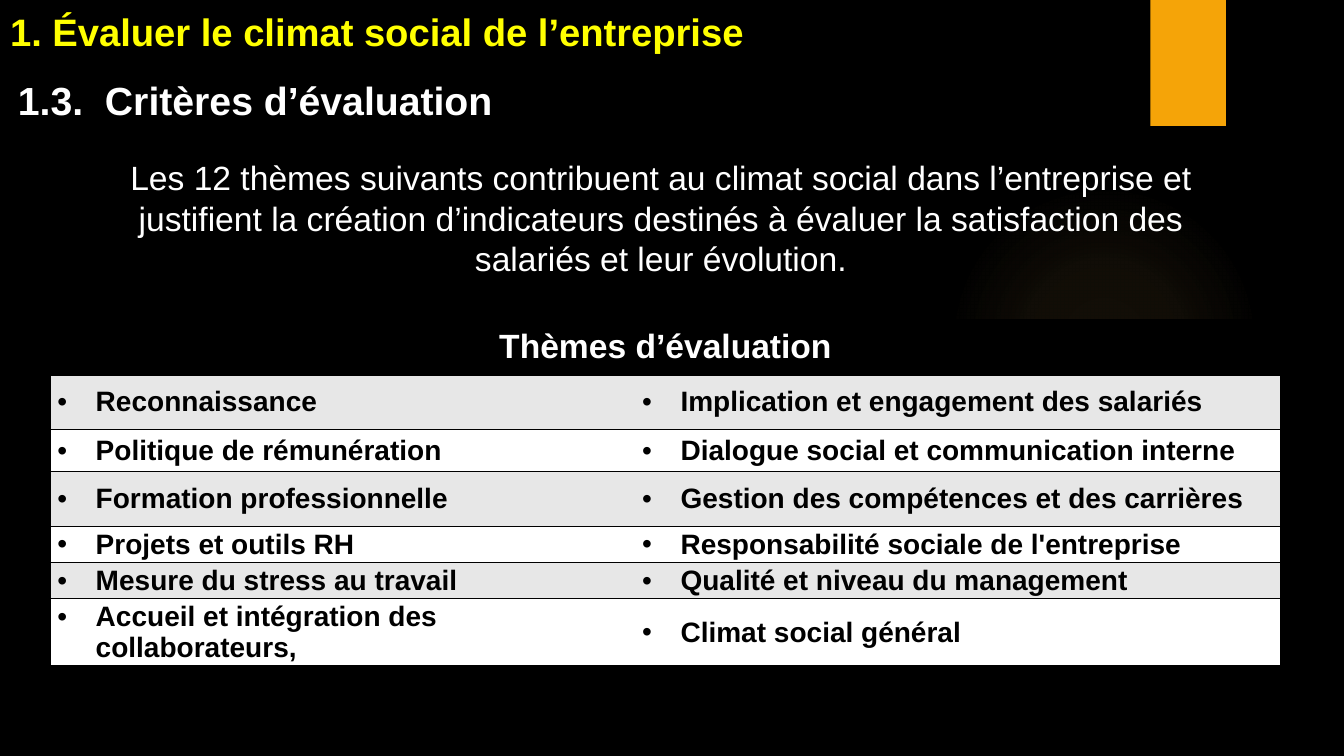
from dataclasses import dataclass

from lxml import etree
from pptx import Presentation
from pptx.dml.color import RGBColor
from pptx.enum.shapes import MSO_SHAPE
from pptx.enum.text import MSO_ANCHOR, MSO_AUTO_SIZE, PP_ALIGN
from pptx.oxml.ns import qn
from pptx.util import Inches, Pt

LEFT, CENTER, JUSTIFY = PP_ALIGN.LEFT, PP_ALIGN.CENTER, PP_ALIGN.JUSTIFY
MIDDLE, BOTTOM = MSO_ANCHOR.MIDDLE, MSO_ANCHOR.BOTTOM
RECTANGLE, OVAL = MSO_SHAPE.RECTANGLE, MSO_SHAPE.OVAL
NO_AUTOFIT = MSO_AUTO_SIZE.NONE
TITLE_ONLY = 5


@dataclass(frozen=True)
class Theme:
    font: str = "Arial"
    black: str = "000000"
    white: str = "FFFFFF"
    yellow: str = "FFFF00"
    orange: str = "F5A408"
    glow: str = "FAC96A"
    band: str = "E7E7E7"
    title: float = 27.3
    heading: float = 28
    body: float = 24
    cell: float = 20


THEME = Theme()

THEMES = [
    ("Reconnaissance", "Implication et engagement des salariés"),
    ("Politique de rémunération", "Dialogue social et communication interne"),
    ("Formation professionnelle", "Gestion des compétences et des carrières"),
    ("Projets et outils RH", "Responsabilité sociale de l'entreprise"),
    ("Mesure du stress au travail", "Qualité et niveau du management"),
    ("Accueil et intégration des collaborateurs,", "Climat social général"),
]
COLUMN_WIDTHS = [5.8, 6.4]
ROW_HEIGHTS = [0.55, 0.54, 0.42, 0.54, 0.36, 0.36, 0.62]


def color(value):
    return RGBColor.from_string(value)


def add_text(para, text, size, ink, bold=True, align=LEFT):
    para.alignment = align
    span = para.add_run()
    span.text = text
    span.font.name = THEME.font
    span.font.size = Pt(size)
    span.font.bold = bold
    span.font.color.rgb = color(ink)


def add_child(parent, tag, **attributes):
    return etree.SubElement(parent, qn(tag), attributes)


def set_indent(para, left, first=0):
    properties = para._p.get_or_add_pPr()
    properties.set("marL", str(Inches(left)))
    properties.set("indent", str(Inches(first)))
    return properties


def add_plain_shape(page, kind, box):
    shape = page.shapes.add_shape(kind, *map(Inches, box))
    shape.shadow.inherit = False
    shape.line.fill.background()
    return shape


# Background: soft glow and orange bar
def add_decoration(page):
    page.background.fill.solid()
    page.background.fill.fore_color.rgb = color(THEME.black)

    glow = add_plain_shape(page, OVAL, (9.41, 1.83, 3.08, 3.08))
    gradient = etree.Element(qn("a:gradFill"), rotWithShape="1")
    stops = add_child(gradient, "a:gsLst")
    for position, opacity in [(0, 7), (36, 6), (69, 0)]:
        stop = add_child(stops, "a:gs", pos=str(position * 1000))
        tint = add_child(stop, "a:srgbClr", val=THEME.glow)
        add_child(tint, "a:alpha", val=str(opacity * 1000))
    circle = add_child(gradient, "a:path", path="circle")
    add_child(circle, "a:fillToRect", **dict.fromkeys("ltrb", "50000"))
    glow._element.spPr.find(qn("a:prstGeom")).addnext(gradient)

    bar = add_plain_shape(page, RECTANGLE, (11.41, 0, 0.75, 1.25))
    bar.fill.solid()
    bar.fill.fore_color.rgb = color(THEME.orange)


# Slide title
def add_title(page, box):
    title = page.shapes.title
    title.left, title.top, title.width, title.height = map(Inches, box)
    frame = title.text_frame
    frame.auto_size = NO_AUTOFIT
    frame.vertical_anchor = BOTTOM
    add_text(frame.paragraphs[0], "1. Évaluer le climat social de l’entreprise",
             THEME.title, THEME.yellow)


# Section heading and introduction
def add_introduction(page, box):
    frame = page.shapes.add_textbox(*map(Inches, box)).text_frame
    frame.word_wrap = True
    heading = frame.paragraphs[0]
    heading.space_after = Pt(6)
    add_text(heading, "1.3.  Critères d’évaluation",
             THEME.heading, THEME.white, align=JUSTIFY)
    introduction = frame.add_paragraph()
    set_indent(introduction, 0.78)
    introduction.space_before = Pt(18)
    introduction.space_after = Pt(6)
    add_text(introduction,
             "Les 12 thèmes suivants contribuent au climat social dans l’entreprise "
             "et justifient la création d’indicateurs destinés à évaluer la "
             "satisfaction des salariés et leur évolution.",
             THEME.body, THEME.white, bold=False, align=CENTER)


def style_cell(cell, fill, sides):
    cell.vertical_anchor = MIDDLE
    cell.margin_left = cell.margin_right = Inches(0.07)
    cell.margin_top = cell.margin_bottom = 0
    properties = cell._tc.get_or_add_tcPr()
    for side in "LRTB":
        border = add_child(properties, f"a:ln{side}", w=str(Pt(1)))
        if side in sides:
            paint = add_child(border, "a:solidFill")
            add_child(paint, "a:srgbClr", val=THEME.black)
        else:
            add_child(border, "a:noFill")
    cell.fill.solid()
    cell.fill.fore_color.rgb = color(fill)


def add_bullet(para):
    properties = set_indent(para, 0.38, -0.38)
    add_child(properties, "a:buFont", typeface=THEME.font)
    add_child(properties, "a:buChar", char="•")


# Table of evaluation themes
def add_theme_table(page, left, top):
    table = page.shapes.add_table(
        len(ROW_HEIGHTS), len(COLUMN_WIDTHS), Inches(left), Inches(top),
        Inches(sum(COLUMN_WIDTHS)), Inches(sum(ROW_HEIGHTS))).table
    table.first_row = table.horz_banding = False
    for column, width in zip(table.columns, COLUMN_WIDTHS):
        column.width = Inches(width)
    for row, height in zip(table.rows, ROW_HEIGHTS):
        row.height = Inches(height)

    header = table.cell(0, 0)
    header.merge(table.cell(0, 1))
    style_cell(header, THEME.black, "LRTB")
    add_text(header.text_frame.paragraphs[0], "Thèmes d’évaluation",
             THEME.body, THEME.white, align=CENTER)

    for row, labels in enumerate(THEMES, start=1):
        fill = THEME.band if row % 2 else THEME.white
        for column, (label, sides) in enumerate(zip(labels, ("LTB", "RTB"))):
            cell = table.cell(row, column)
            style_cell(cell, fill, sides)
            para = cell.text_frame.paragraphs[0]
            add_bullet(para)
            add_text(para, label, THEME.cell, THEME.black)


def main():
    deck = Presentation()
    deck.slide_width, deck.slide_height = Inches(13.33), Inches(7.5)
    page = deck.slides.add_slide(deck.slide_layouts[TITLE_ONLY])
    add_decoration(page)
    add_title(page, (0, 0, 13.14, 0.59))
    add_introduction(page, (0.08, 0.71, 12.17, 2.12))
    add_theme_table(page, 0.5, 3.17)
    deck.save("out.pptx")


if __name__ == "__main__":
    main()
